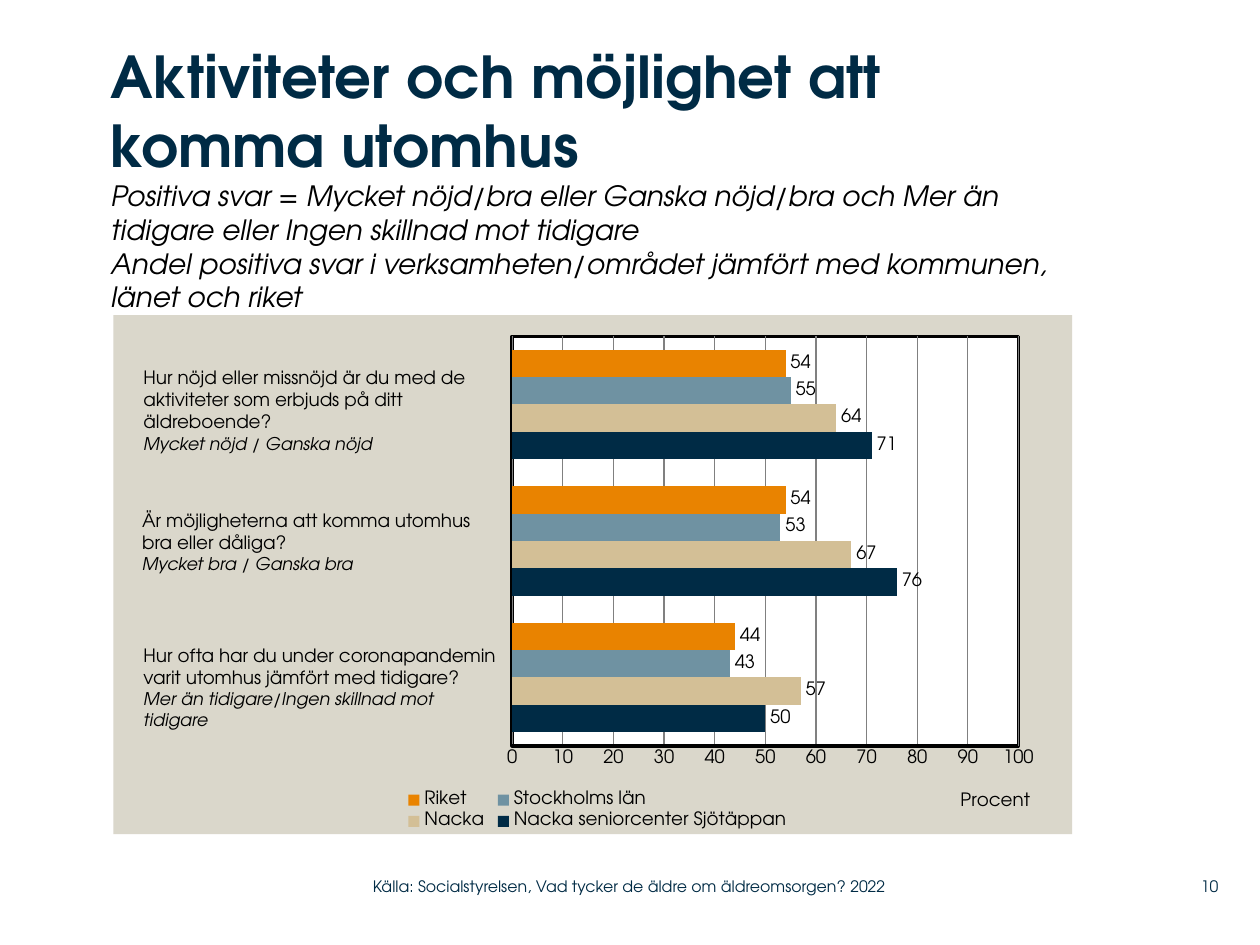
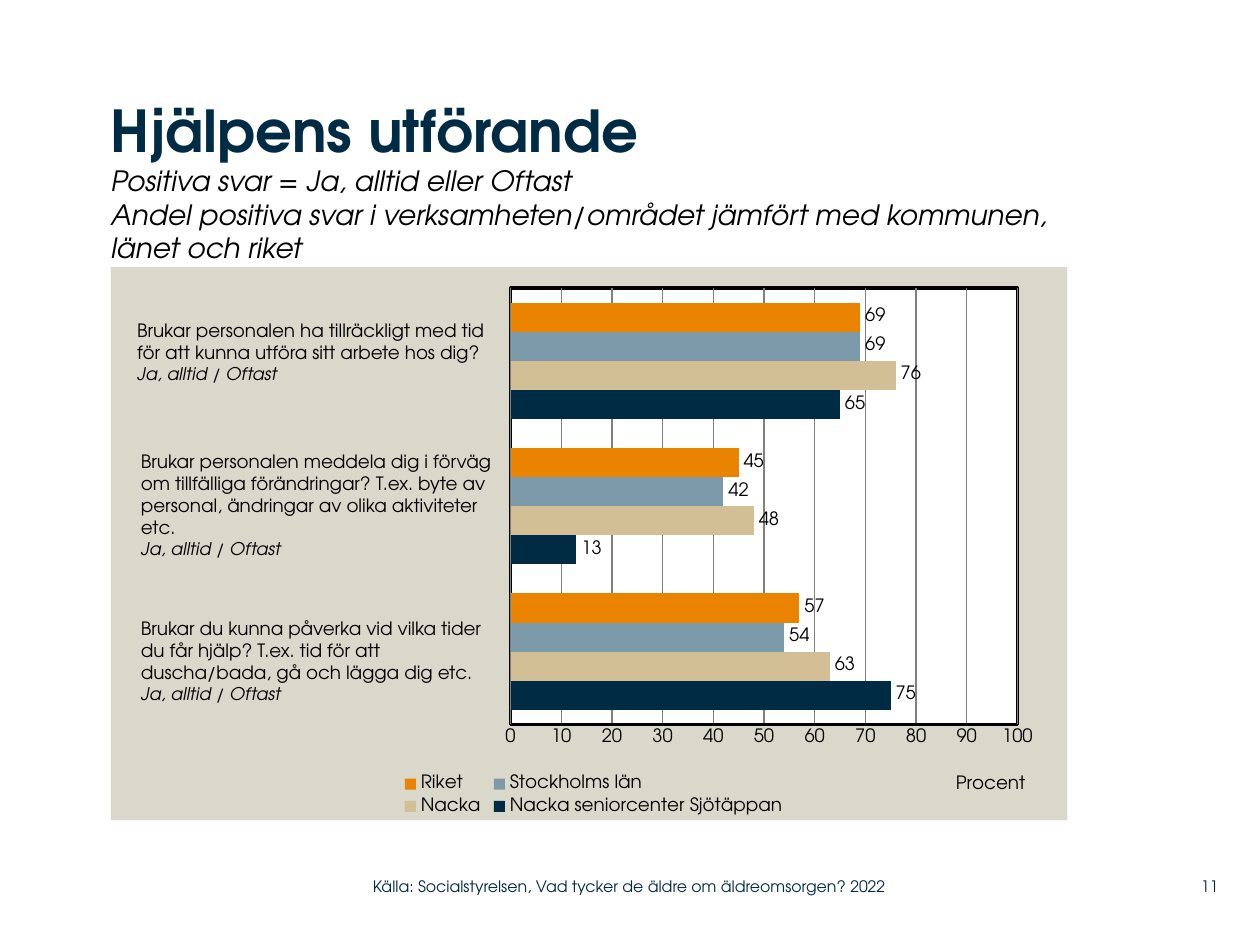
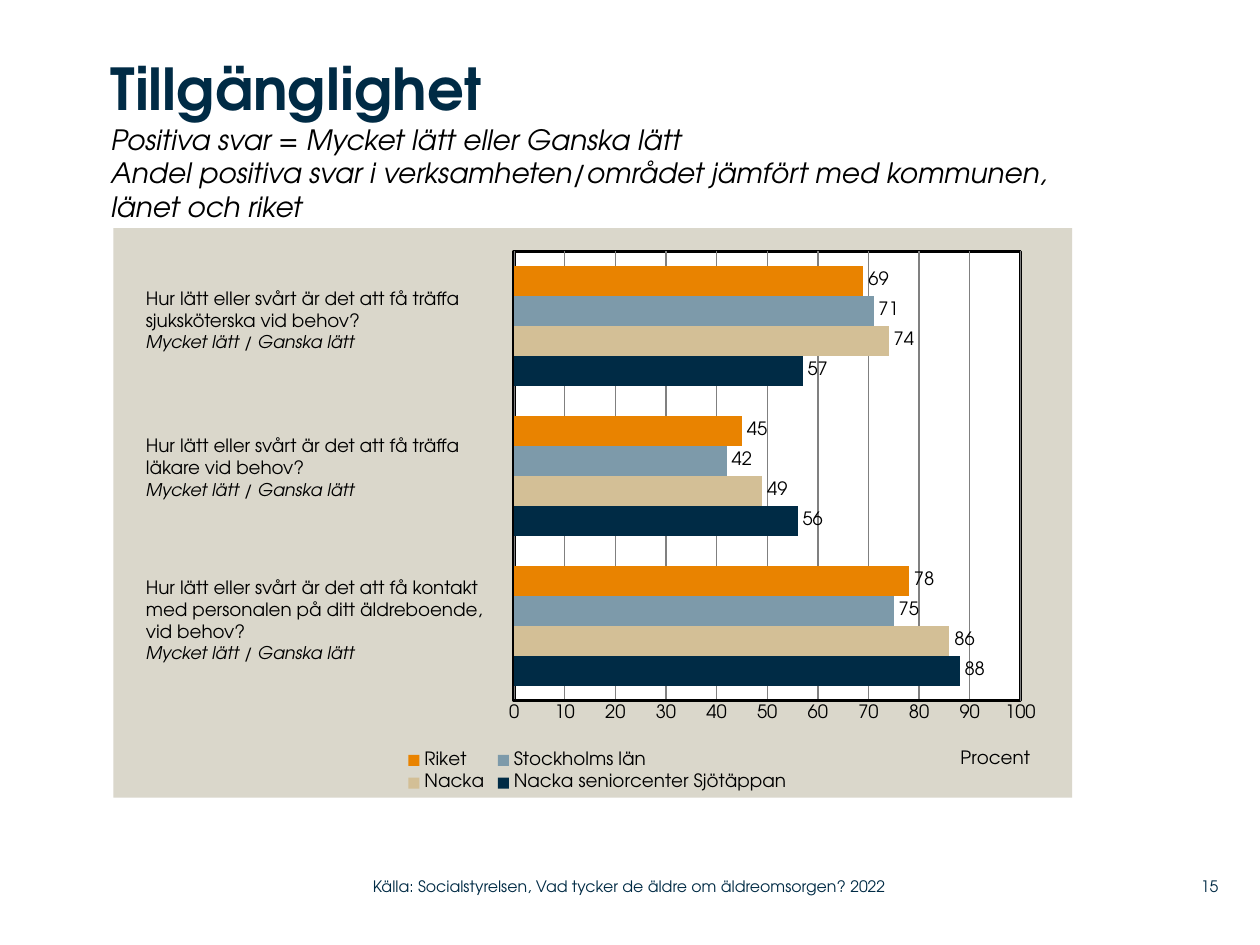
from lxml import etree
from pptx import Presentation
from pptx.chart.data import CategoryChartData
from pptx.dml.color import RGBColor
from pptx.enum.chart import (XL_CHART_TYPE, XL_LABEL_POSITION,
                             XL_LEGEND_POSITION, XL_TICK_MARK)
from pptx.enum.text import MSO_ANCHOR, PP_ALIGN
from pptx.oxml import parse_xml
from pptx.oxml.ns import nsdecls, qn
from pptx.util import Inches, Pt

BAR = XL_CHART_TYPE.BAR_CLUSTERED
OUTSIDE_END = XL_LABEL_POSITION.OUTSIDE_END
BOTTOM = XL_LEGEND_POSITION.BOTTOM
NO_TICK = XL_TICK_MARK.NONE
TOP, MIDDLE = MSO_ANCHOR.TOP, MSO_ANCHOR.MIDDLE
LEFT, RIGHT = PP_ALIGN.LEFT, PP_ALIGN.RIGHT

# Shared grid: 100 columns by 75 rows
SLIDE_SIZE = Inches(10), Inches(7.5)
COLUMNS, ROWS = 100, 75

# Shared look
FONT = "TeX Gyre Adventor"
NAVY, BLACK, WHITE, PANEL, GRID = "002B45", "000000", "FFFFFF", "DAD7CB", "808080"
SAND, ORANGE, SLATE, STEEL = "D3BF96", "E98300", "6F92A2", "7D9AAA"
HEADING = {"size": Pt(33), "bold": True, "color": NAVY}
SUBTITLE = {"size": Pt(16), "italic": True, "color": BLACK}
QUESTION = {"size": Pt(10.5), "color": BLACK}
ANSWER = {"size": Pt(10), "italic": True, "color": BLACK}
FOOTER = {"size": Pt(9), "color": NAVY}

SOURCE = "Källa: Socialstyrelsen, Vad tycker de äldre om äldreomsorgen? 2022"
COMPARISON = ("Andel positiva svar i verksamheten/området jämfört "
              "med kommunen, länet och riket")
AREAS = ["Nacka seniorcenter Sjötäppan", "Nacka", "Stockholms län", "Riket"]
QUESTION_WIDTH = 30.1


def rgb(value):
    return RGBColor.from_string(value)


def style_font(font, style):
    for name, value in {"name": FONT, **style}.items():
        if name == "color":
            font.color.rgb = rgb(value)
        else:
            setattr(font, name, value)


def shape_format(fill, line=None):
    """Fill and outline for a chart part."""
    outline = (f'<a:ln w="{Pt(2)}"><a:solidFill><a:srgbClr val="{line}"/>'
               '</a:solidFill></a:ln>' if line else "<a:ln><a:noFill/></a:ln>")
    return parse_xml(f'<c:spPr {nsdecls("c", "a")}><a:solidFill>'
                     f'<a:srgbClr val="{fill}"/></a:solidFill>{outline}</c:spPr>')


def place(part, index, x, y, size=(), inner=False):
    """Set a chart part at shares of the chart's size."""
    for old in part.findall(qn("c:layout")):
        part.remove(old)
    layout = parse_xml(f'<c:layout {nsdecls("c")}><c:manualLayout/></c:layout>')
    settings = [("layoutTarget", "inner")] if inner else []
    settings += [("xMode", "edge"), ("yMode", "edge"), ("x", x), ("y", y)]
    settings += zip("wh", size)
    for tag, value in settings:
        etree.SubElement(layout[0], qn(f"c:{tag}")).set("val", str(value))
    part.insert(index, layout)


class Report:
    def __init__(self):
        self.deck = Presentation()
        self.deck.slide_width, self.deck.slide_height = SLIDE_SIZE
        self.slide = None

    def box(self, left, top, width, height):
        width_unit, height_unit = SLIDE_SIZE[0] / COLUMNS, SLIDE_SIZE[1] / ROWS
        return (round(left * width_unit), round(top * height_unit),
                round(width * width_unit), round(height * height_unit))

    def text(self, area, lines, anchor=TOP, align=LEFT, inset=True):
        frame = self.slide.shapes.add_textbox(*self.box(*area)).text_frame
        frame.word_wrap = True
        frame.vertical_anchor = anchor
        if not inset:
            for side in ("left", "top", "right", "bottom"):
                setattr(frame, f"margin_{side}", 0)
        for number, (words, style) in enumerate(lines):
            paragraph = frame.add_paragraph() if number else frame.paragraphs[0]
            paragraph.alignment = align
            run = paragraph.add_run()
            run.text = words
            style_font(run.font, style)

    def start(self, page, heading, positive, top, height):
        self.slide = self.deck.slides.add_slide(self.deck.slide_layouts[6])
        self.text((8.8, top, 78, height),
                  [(heading, HEADING), (positive, SUBTITLE), (COMPARISON, SUBTITLE)],
                  inset=False)
        # Footer
        self.text((29.6, 68.9, 44.3, 2.9), [(SOURCE, FOOTER)], MIDDLE, inset=False)
        self.text((92, 68.9, 4.7, 2.9), [(str(page), FOOTER)], MIDDLE, RIGHT, False)

    def chart(self, area, values, county_color, plot):
        data = CategoryChartData()
        data.categories = ["1", "2", "3"]
        for name, shares in zip(AREAS, values):
            data.add_series(name, shares)
        chart = self.slide.shapes.add_chart(BAR, *self.box(*area), data).chart
        chart.has_title = False
        style_font(chart.font, QUESTION)

        # Bars and their values
        bars = chart.plots[0]
        bars.gap_width, bars.overlap, bars.vary_by_categories = 100, 0, False
        for series, color in zip(bars.series, (NAVY, SAND, county_color, ORANGE)):
            series.format.fill.solid()
            series.format.fill.fore_color.rgb = rgb(color)
            labels = series.data_labels
            labels.show_value, labels.position = True, OUTSIDE_END
            style_font(labels.font, QUESTION)

        # Axes
        chart.category_axis.visible = False
        percent = chart.value_axis
        for name, value in {"minimum_scale": 0, "maximum_scale": 100, "major_unit": 10,
                            "major_tick_mark": NO_TICK, "minor_tick_mark": NO_TICK,
                            "has_major_gridlines": True}.items():
            setattr(percent, name, value)
        for line, color, width in ((percent.format.line, BLACK, 2),
                                   (percent.major_gridlines.format.line, GRID, 0.75)):
            line.color.rgb = rgb(color)
            line.width = Pt(width)
        style_font(percent.tick_labels.font, QUESTION)
        caption = percent.axis_title
        caption.text_frame.text = "Procent"
        style_font(caption.text_frame.paragraphs[0].runs[0].font,
                   {**QUESTION, "bold": False})

        # Legend
        chart.has_legend = True
        legend = chart.legend
        legend.position, legend.include_in_layout = BOTTOM, False
        style_font(legend.font, QUESTION)

        # Panel, plot frame and positions
        space = chart.element
        space.find(qn("c:chart")).addnext(shape_format(PANEL))
        plot_area = space.find(f".//{qn('c:plotArea')}")
        plot_area.append(shape_format(WHITE, BLACK))
        place(plot_area, 0, *plot[:2], plot[2:], inner=True)
        place(space.find(f".//{qn('c:legend')}"), 1, 0.3, 0.91, (0.41, 0.09))
        place(plot_area.find(f".//{qn('c:title')}"), 1, 0.88, 0.91)

    def question(self, left, top, height, lines, answer):
        self.text((left, top, QUESTION_WIDTH, height),
                  [(line, QUESTION) for line in lines] + [(answer, ANSWER)])


PAGES = [
    {"title": (10, "Aktiviteter och möjlighet att komma utomhus",
               "Positiva svar = Mycket nöjd/bra eller Ganska nöjd/bra och "
               "Mer än tidigare eller Ingen skillnad mot tidigare", 3.2, 18.9),
     "chart": ((9, 25, 76.1, 41.2),
               [(50, 76, 71), (57, 67, 64), (43, 53, 55), (44, 54, 54)],
               SLATE, (0.416, 0.041, 0.528, 0.789)),
     "questions": [
         (10.4, 28.6, 9.8, ["Hur nöjd eller missnöjd är du med de aktiviteter "
                            "som erbjuds på ditt äldreboende?"],
          "Mycket nöjd / Ganska nöjd"),
         (10.3, 39.9, 8.1, ["Är möjligheterna att komma utomhus",
                            "bra eller dåliga?"],
          "Mycket bra / Ganska bra"),
         (10.4, 50.6, 7.9, ["Hur ofta har du under coronapandemin varit utomhus "
                            "jämfört med tidigare?"],
          "Mer än tidigare/Ingen skillnad mot tidigare")]},
    {"title": (11, "Hjälpens utförande",
               "Positiva svar = Ja, alltid eller Oftast", 7.5, 12.1),
     "chart": ((8.8, 21.2, 75.9, 43.9),
               [(75, 13, 65), (63, 48, 76), (54, 42, 69), (57, 45, 69)],
               STEEL, (0.418, 0.038, 0.53, 0.789)),
     "questions": [
         (9.9, 24.8, 8.1, ["Brukar personalen ha tillräckligt med tid",
                           "för att kunna utföra sitt arbete hos dig?"],
          "Ja, alltid / Oftast"),
         (10.2, 35.2, 9.8, ["Brukar personalen meddela dig i förväg om tillfälliga "
                            "förändringar? T.ex. byte av personal, ändringar av "
                            "olika aktiviteter etc."],
          "Ja, alltid / Oftast"),
         (10.2, 48.5, 8.1, ["Brukar du kunna påverka vid vilka tider",
                            "du får hjälp? T.ex. tid för att",
                            "duscha/bada, gå och lägga dig etc."],
          "Ja, alltid / Oftast")]},
    {"title": (15, "Tillgänglighet",
               "Positiva svar = Mycket lätt eller Ganska lätt", 4.2, 13.9),
     "chart": ((9, 18.1, 76.1, 45.2),
               [(88, 56, 57), (86, 49, 74), (75, 42, 71), (78, 45, 69)],
               STEEL, (0.418, 0.041, 0.528, 0.789)),
     "questions": [
         (10.6, 22.3, 8.1, ["Hur lätt eller svårt är det att få träffa "
                            "sjuksköterska vid behov?"],
          "Mycket lätt / Ganska lätt"),
         (10.6, 34, 8.1, ["Hur lätt eller svårt är det att få träffa",
                          "läkare vid behov?"],
          "Mycket lätt / Ganska lätt"),
         (10.6, 45.2, 9.8, ["Hur lätt eller svårt är det att få kontakt",
                            "med personalen på ditt äldreboende,",
                            "vid behov?"],
          "Mycket lätt / Ganska lätt")]},
]


def main():
    report = Report()
    for page in PAGES:
        report.start(*page["title"])
        report.chart(*page["chart"])
        for question in page["questions"]:
            report.question(*question)
    report.deck.save("out.pptx")


if __name__ == "__main__":
    main()
